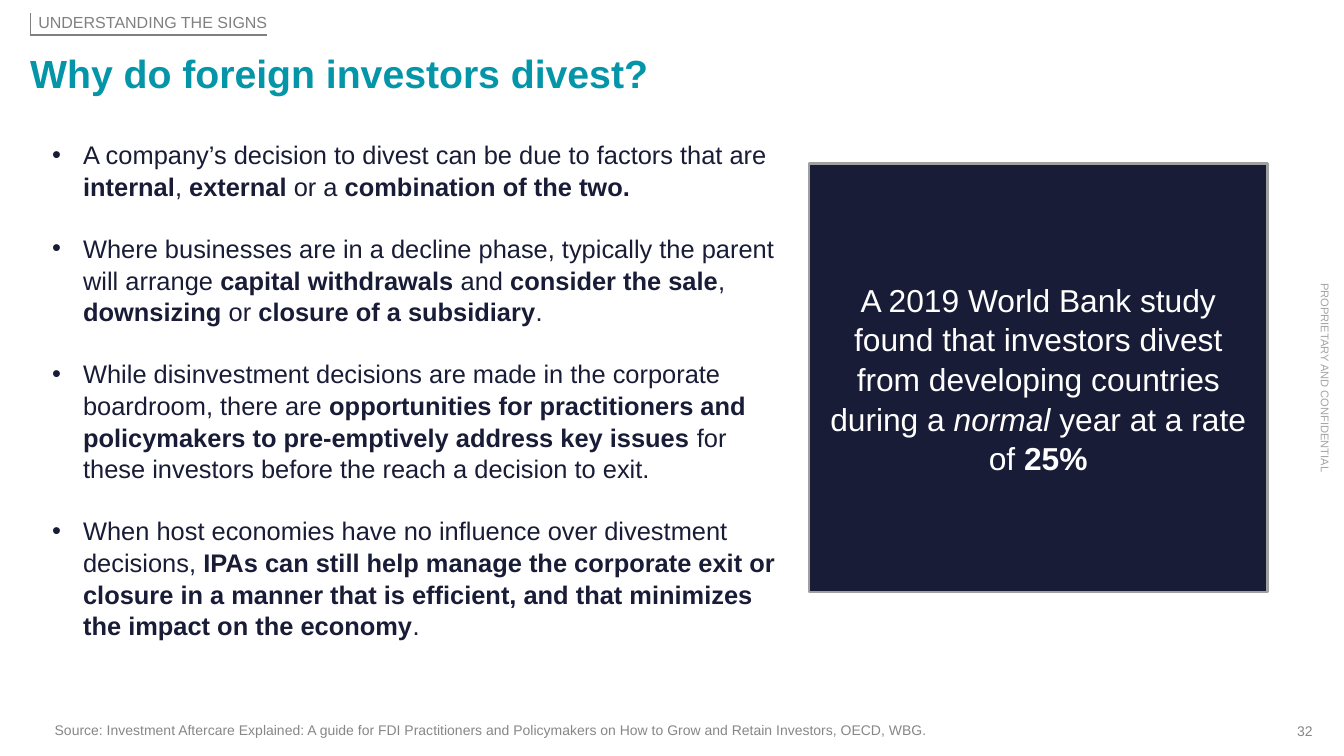
"""Build a slide on why foreign investors divest."""
import pptx
import pptx.dml.color
import pptx.enum.shapes
import pptx.enum.text
import pptx.oxml
import pptx.oxml.ns
import pptx.util
from pptx.util import Cm

FONT = "Arial"
COLORS = {
    "teal": "0495A8",
    "navy": "181C36",
    "white": "FFFFFF",
    "tag": "808080",
    "footer": "878787",
    "notice": "A5A5A5",
    "border": "A0A0A0",
}
ALIGN = pptx.enum.text.PP_ALIGN
ANCHOR = pptx.enum.text.MSO_ANCHOR

REASONS = [
    [
        ("A company’s decision to divest can be due to factors that are ", ""),
        ("internal", "bold"),
        (", ", ""),
        ("external", "bold"),
        (" or a ", ""),
        ("combination of the two.", "bold"),
    ],
    [
        ("Where businesses are in a decline phase, typically the parent will arrange ", ""),
        ("capital withdrawals ", "bold"),
        ("and ", ""),
        ("consider the sale", "bold"),
        (", ", ""),
        ("downsizing", "bold"),
        (" or ", ""),
        ("closure of a subsidiary", "bold"),
        (".", ""),
    ],
    [
        ("While disinvestment decisions are made in the corporate boardroom, there are ", ""),
        ("opportunities for practitioners and policymakers to pre-emptively "
         "address key issues ", "bold"),
        ("for these investors before the reach a decision to exit.", ""),
    ],
    [
        ("When host economies have no influence over divestment decisions, ", ""),
        ("IPAs can still help manage the corporate exit or closure in a manner that is "
         "efficient, and that minimizes the impact on the economy", "bold"),
        (".", ""),
    ],
]
FINDING = [
    ("A 2019 World Bank study found that investors divest from developing countries "
     "during a ", ""),
    ("normal", "italic"),
    (" year at a rate of ", ""),
    ("25%", "bold"),
]
SOURCE = ("Source: Investment Aftercare Explained: A guide for FDI Practitioners and "
          "Policymakers on How to Grow and Retain Investors, OECD, WBG.")


def rgb(name):
    """Return the named palette colour."""
    return pptx.dml.color.RGBColor.from_string(COLORS[name])


def add_runs(paragraph, runs, size, color, align=ALIGN.LEFT):
    """Fill a paragraph with (text, emphasis) runs."""
    paragraph.alignment = align
    for text, emphasis in runs:
        run = paragraph.add_run()
        run.text = text
        run.font.name = FONT
        run.font.size = pptx.util.Pt(size)
        run.font.color.rgb = rgb(color)
        run.font.bold = emphasis == "bold"
        run.font.italic = emphasis == "italic"


def set_frame(frame, margin=0.0, anchor=ANCHOR.TOP):
    """Give a text frame wrapping, equal margins and an anchor."""
    frame.word_wrap = True
    frame.auto_size = pptx.enum.text.MSO_AUTO_SIZE.NONE
    frame.margin_left = frame.margin_right = Cm(margin)
    frame.margin_top = frame.margin_bottom = Cm(margin / 2)
    frame.vertical_anchor = anchor


def add_label(slide, box, text, size, color, align=ALIGN.LEFT, anchor=ANCHOR.TOP):
    """Add a one-line text box without margins."""
    shape = slide.shapes.add_textbox(*map(Cm, box))
    set_frame(shape.text_frame, anchor=anchor)
    add_runs(shape.text_frame.paragraphs[0], [(text, "")], size, color, align)
    return shape


def add_rule(slide, ends, width):
    """Add a straight grey line without shadow."""
    line = slide.shapes.add_connector(
        pptx.enum.shapes.MSO_CONNECTOR.STRAIGHT, *map(Cm, ends))
    line.line.color.rgb = rgb("tag")
    line.line.width = pptx.util.Pt(width)
    properties = line._element.spPr
    properties.append(pptx.oxml.parse_xml(
        f"<a:effectLst {pptx.oxml.ns.nsdecls('a')}/>"))


def add_title(slide, text):
    """Place and format the title placeholder."""
    title = slide.shapes.title
    title.left, title.top, title.width, title.height = map(Cm, (0.84, 1.37, 36.04, 1.32))
    set_frame(title.text_frame)
    add_runs(title.text_frame.paragraphs[0], [(text, "bold")], 30.9, "teal")


def add_section_tag(slide, text):
    """Add the section name with its left and bottom rules."""
    left, top, right, bottom = 0.84, 0.36, 7.42, 0.97
    add_label(slide, (left, top, right - left, bottom - top), text, 12.6, "tag", ALIGN.RIGHT)
    add_rule(slide, (right, bottom, left, bottom), 1.5)
    add_rule(slide, (left, top, left, bottom), 0.75)


def add_bullet(paragraph):
    """Give a paragraph a hanging navy bullet."""
    properties = paragraph._p.get_or_add_pPr()
    properties.set("marL", str(Cm(1.22)))
    properties.set("indent", str(Cm(-0.86)))
    namespace = pptx.oxml.ns.nsdecls("a")
    for xml in (
        f'<a:buClr {namespace}><a:srgbClr val="{COLORS["navy"]}"/></a:buClr>',
        f'<a:buFont {namespace} typeface="{FONT}"/>',
        f'<a:buChar {namespace} char="•"/>',
    ):
        properties.append(pptx.oxml.parse_xml(xml))


def add_reasons(slide, reasons):
    """Add the bulleted list of reasons."""
    frame = slide.shapes.add_textbox(*map(Cm, (0.84, 3.71, 21.16, 15.32))).text_frame
    set_frame(frame, 0.25)
    for index, runs in enumerate(reasons):
        paragraph = frame.add_paragraph() if index else frame.paragraphs[0]
        add_bullet(paragraph)
        paragraph.line_spacing = 1.04
        paragraph.space_before = pptx.util.Pt(24 if index else 0)
        add_runs(paragraph, runs, 20, "navy")


def add_finding(slide, runs):
    """Add the navy panel with the key finding."""
    panel = slide.shapes.add_shape(
        pptx.enum.shapes.MSO_SHAPE.RECTANGLE, *map(Cm, (22.48, 4.55, 12.73, 11.91)))
    panel.shadow.inherit = False
    panel.fill.solid()
    panel.fill.fore_color.rgb = rgb("navy")
    panel.line.color.rgb = rgb("border")
    panel.line.width = pptx.util.Pt(2)
    set_frame(panel.text_frame, 0.25, ANCHOR.MIDDLE)
    paragraph = panel.text_frame.paragraphs[0]
    paragraph.line_spacing = 1.04
    add_runs(paragraph, runs, 25, "white", ALIGN.CENTER)


def main():
    """Build and save the slide."""
    presentation = pptx.Presentation()
    presentation.slide_width, presentation.slide_height = Cm(37.34), Cm(21.01)
    slide = presentation.slides.add_slide(presentation.slide_layouts[5])
    add_title(slide, "Why do foreign investors divest?")
    add_section_tag(slide, "UNDERSTANDING THE SIGNS")
    add_reasons(slide, REASONS)
    add_finding(slide, FINDING)
    add_label(slide, (1.52, 20.04, 29.44, 0.48), SOURCE, 11, "footer", anchor=ANCHOR.BOTTOM)
    add_label(slide, (35.71, 20.09, 0.76, 0.48), "32", 11, "footer", ALIGN.RIGHT)
    notice = add_label(slide, (34.11, 10.31, 5.41, 0.38), "PROPRIETARY AND CONFIDENTIAL",
                       8.8, "notice", ALIGN.CENTER)
    notice.rotation = 90
    presentation.save("out.pptx")


if __name__ == "__main__":
    main()
